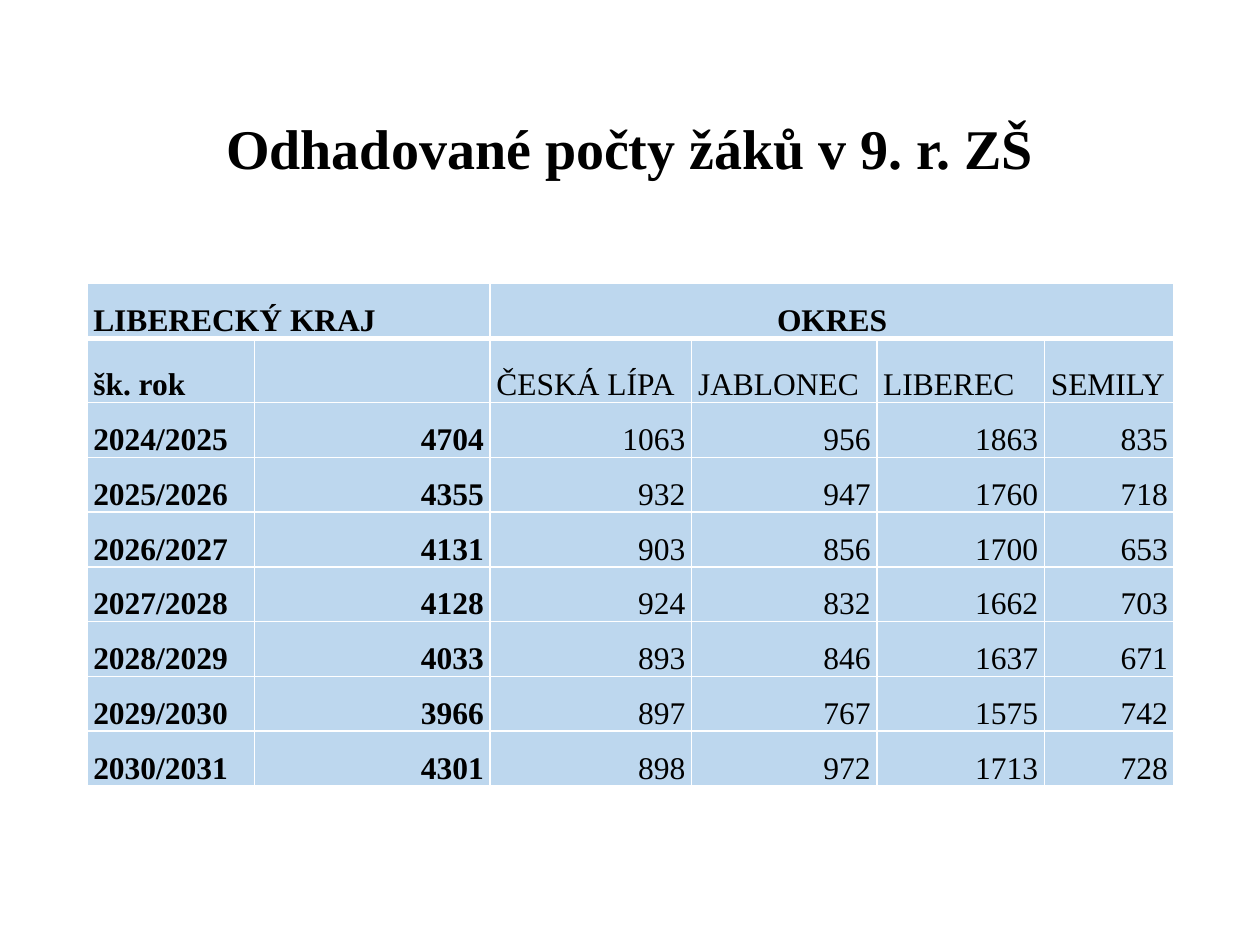
from lxml import etree
from pptx import Presentation
from pptx.dml.color import RGBColor
from pptx.enum.text import MSO_ANCHOR, PP_ALIGN
from pptx.oxml.ns import qn
from pptx.util import Inches, Pt

LEFT, CENTER, RIGHT = PP_ALIGN.LEFT, PP_ALIGN.CENTER, PP_ALIGN.RIGHT
MIDDLE, BOTTOM = MSO_ANCHOR.MIDDLE, MSO_ANCHOR.BOTTOM
FONT = "Times New Roman"
COLORS = {"text": "000000", "cell": "BDD7EE", "line": "FFFFFF"}
WIDTHS = [1.33, 1.87, 1.6, 1.47, 1.33, 1.03]
HEIGHT, HEAD = 3.99, 0.51
ROWS = [
    ["LIBERECKÝ KRAJ", "", "OKRES", "", "", ""],
    ["šk. rok", "", "ČESKÁ LÍPA", "JABLONEC", "LIBEREC", "SEMILY"],
    ["2024/2025", 4704, 1063, 956, 1863, 835],
    ["2025/2026", 4355, 932, 947, 1760, 718],
    ["2026/2027", 4131, 903, 856, 1700, 653],
    ["2027/2028", 4128, 924, 832, 1662, 703],
    ["2028/2029", 4033, 893, 846, 1637, 671],
    ["2029/2030", 3966, 897, 767, 1575, 742],
    ["2030/2031", 4301, 898, 972, 1713, 728],
]


def set_font(para, size, bold):
    font = para.font
    font.name, font.size, font.bold = FONT, Pt(size), bold
    font.color.rgb = RGBColor.from_string(COLORS["text"])


def add_title(slide, text):
    box = slide.shapes.add_textbox(Inches(0.69), Inches(0.4), Inches(8.62), Inches(1.45))
    frame = box.text_frame
    frame.word_wrap = True
    frame.vertical_anchor = MIDDLE
    para = frame.paragraphs[0]
    para.text = text
    para.alignment = CENTER
    para.line_spacing = 1.15
    set_font(para, 32, True)


def add_lines(cell, row):
    props = cell._tc.get_or_add_tcPr()
    thick = {0: "lnB", 1: "lnT"}.get(row)
    for tag in ("lnL", "lnR", "lnT", "lnB"):
        width = Pt(3 if tag == thick else 1)
        line = etree.SubElement(props, qn(f"a:{tag}"), w=str(width))
        fill = etree.SubElement(line, qn("a:solidFill"))
        etree.SubElement(fill, qn("a:srgbClr"), val=COLORS["line"])


def fill_cell(cell, row, col, value):
    add_lines(cell, row)
    cell.fill.solid()
    cell.fill.fore_color.rgb = RGBColor.from_string(COLORS["cell"])
    cell.vertical_anchor = BOTTOM
    cell.margin_left = cell.margin_right = Inches(0.05)
    cell.margin_top = cell.margin_bottom = 0
    para = cell.text_frame.paragraphs[0]
    para.text = str(value)
    if row == 0 and col == 2:
        para.alignment = CENTER
    else:
        para.alignment = RIGHT if isinstance(value, int) else LEFT
    set_font(para, 18, row == 0 or col < 2)


def add_grid(slide):
    frame = slide.shapes.add_table(
        len(ROWS), len(WIDTHS), Inches(0.69), Inches(2.25), Inches(sum(WIDTHS)), Inches(HEIGHT)
    )
    table = frame.table
    for col, width in zip(table.columns, WIDTHS):
        col.width = Inches(width)
    plain = (HEIGHT - HEAD) / (len(ROWS) - 1)
    for row, values in enumerate(ROWS):
        table.rows[row].height = Inches(HEAD if row == 1 else plain)
        for col, value in enumerate(values):
            fill_cell(table.cell(row, col), row, col, value)
    table.cell(0, 0).merge(table.cell(0, 1))
    table.cell(0, 2).merge(table.cell(0, 5))


def main():
    deck = Presentation()
    deck.slide_width, deck.slide_height = Inches(10), Inches(7.5)
    slide = deck.slides.add_slide(deck.slide_layouts[6])
    add_title(slide, "Odhadované počty žáků v 9. r. ZŠ")
    add_grid(slide)
    deck.save("out.pptx")


if __name__ == "__main__":
    main()
